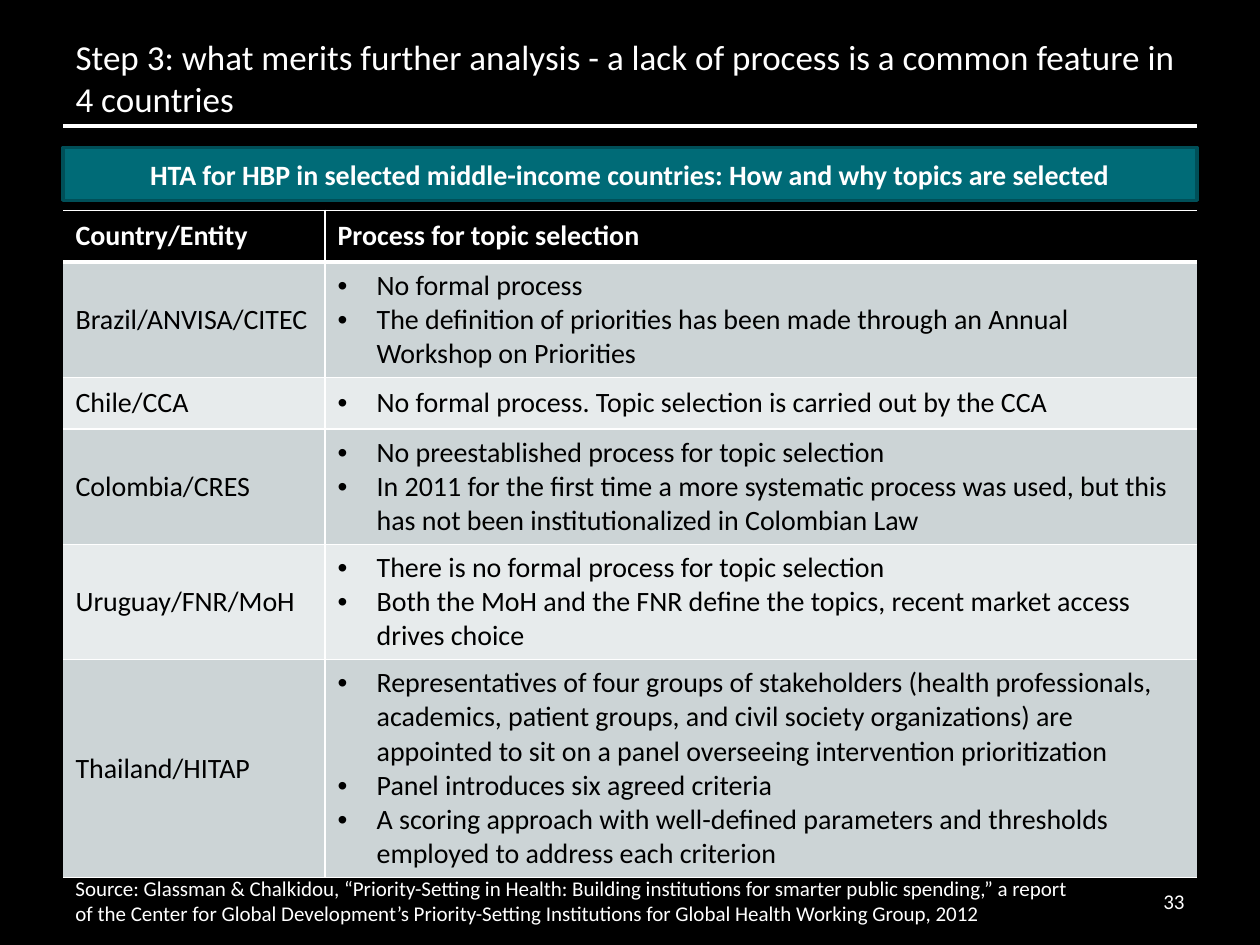
from lxml import etree
from pptx import Presentation
from pptx.dml.color import RGBColor
from pptx.enum.shapes import MSO_CONNECTOR, MSO_SHAPE
from pptx.enum.text import MSO_ANCHOR, MSO_AUTO_SIZE, PP_ALIGN
from pptx.oxml.ns import qn
from pptx.util import Inches, Pt

LEFT, CENTER, RIGHT = PP_ALIGN.LEFT, PP_ALIGN.CENTER, PP_ALIGN.RIGHT
MIDDLE, BOTTOM = MSO_ANCHOR.MIDDLE, MSO_ANCHOR.BOTTOM
RECT, STRAIGHT = MSO_SHAPE.RECTANGLE, MSO_CONNECTOR.STRAIGHT
NO_FIT = MSO_AUTO_SIZE.NONE

FONT = "Calibri"
WHITE, BLACK, TEAL, EDGE = "FFFFFF", "000000", "006B77", "004F58"
BANDS = ("CCD4D6", "E7EBEC")
SIDE, WIDE = 0.5, 9
COLS = (2.08, 6.92)

TITLE = "Step 3: what merits further analysis - a lack of process is a common feature in 4 countries"
BANNER = "HTA for HBP in selected middle-income countries: How and why topics are selected"
SOURCE = (
    "Source: Glassman & Chalkidou, “Priority-Setting in Health: Building institutions for "
    "smarter public spending,” a report of the Center for Global Development’s "
    "Priority-Setting Institutions for Global Health Working Group, 2012"
)
NUMBER = "33"
HEADS = ("Country/Entity", "Process for topic selection")
ROWS = [
    ("Brazil/ANVISA/CITEC", 0.91, [
        "No formal process",
        "The definition of priorities has been made through an Annual Workshop on Priorities",
    ]),
    ("Chile/CCA", 0.41, [
        "No formal process. Topic selection is carried out by the CCA",
    ]),
    ("Colombia/CRES", 0.91, [
        "No preestablished process for topic selection",
        "In 2011 for the first time a more systematic process was used, but this has not been "
        "institutionalized in Colombian Law",
    ]),
    ("Uruguay/FNR/MoH", 0.91, [
        "There is no formal process for topic selection",
        "Both the MoH and the FNR define the topics, recent market access drives choice",
    ]),
    ("Thailand/HITAP", 1.66, [
        "Representatives of four groups of stakeholders (health professionals, academics, "
        "patient groups, and civil society organizations) are appointed to sit on a panel "
        "overseeing intervention prioritization",
        "Panel introduces six agreed criteria",
        "A scoring approach with well-defined parameters and thresholds employed to address "
        "each criterion",
    ]),
]


def rgb(code):
    """Turn a hex string into a colour."""
    return RGBColor.from_string(code)


def write(frame, text, size, color=WHITE, bold=False, align=LEFT):
    """Set the text of a frame and format its runs."""
    frame.text = text
    for para in frame.paragraphs:
        para.alignment = align
        for run in para.runs:
            font = run.font
            font.name, font.size, font.bold = FONT, Pt(size), bold
            font.color.rgb = rgb(color)


def place(shape, left, top, width, height):
    """Move and size a shape in inches."""
    shape.left, shape.top = Inches(left), Inches(top)
    shape.width, shape.height = Inches(width), Inches(height)


def set_frame(frame, anchor=MIDDLE):
    """Wrap a text frame, fix its size and anchor it."""
    frame.word_wrap, frame.auto_size = True, NO_FIT
    frame.vertical_anchor = anchor


def add_note(slide, text, left, width, align=LEFT):
    """Add one footer text box."""
    box = slide.shapes.add_textbox(Inches(left), Inches(6.95), Inches(width), Inches(0.4))
    set_frame(box.text_frame)
    write(box.text_frame, text, 12, align=align)


def add_bullets(frame):
    """Give each paragraph a hanging bullet."""
    for para in frame.paragraphs:
        props = para._p.get_or_add_pPr()
        props.set("marL", str(Inches(0.31)))
        props.set("indent", str(-Inches(0.31)))
        etree.SubElement(props, qn("a:buFont")).set("typeface", "Arial")
        etree.SubElement(props, qn("a:buChar")).set("char", "•")


def set_edges(cell, edges):
    """Draw white cell borders of the given point widths, zero for none."""
    props = cell._tc.get_or_add_tcPr()
    for side, width in zip("LRTB", edges):
        line = etree.SubElement(props, qn("a:ln" + side), w=str(Pt(width)))
        if width:
            fill = etree.SubElement(line, qn("a:solidFill"))
            etree.SubElement(fill, qn("a:srgbClr"), val=WHITE)
        else:
            etree.SubElement(line, qn("a:noFill"))


def add_grid(slide):
    """Build the table of countries and processes."""
    rows = [(HEADS[0], 0.41, [HEADS[1]])] + ROWS
    total = sum(height for _, height, _ in rows)
    table = slide.shapes.add_table(
        len(rows), len(COLS), Inches(SIDE), Inches(1.67), Inches(WIDE), Inches(total)
    ).table
    table.horz_banding = False
    for col, width in zip(table.columns, COLS):
        col.width = Inches(width)
    for r, (name, height, items) in enumerate(rows):
        table.rows[r].height = Inches(height)
        head = r == 0
        for c, text in enumerate((name, "\n".join(items))):
            cell = table.cell(r, c)
            cell.vertical_anchor = MIDDLE
            write(cell.text_frame, text, 16, WHITE if head else BLACK, head)
            set_edges(cell, (c, 1 - c, 3 if r == 1 else 1, 3 if head else 1))
            if head:
                cell.fill.background()
                continue
            cell.fill.solid()
            cell.fill.fore_color.rgb = rgb(BANDS[(r - 1) % 2])
            if c:
                add_bullets(cell.text_frame)


def main():
    """Build the slide and save it."""
    deck = Presentation()
    deck.slide_width, deck.slide_height = Inches(10), Inches(7.5)
    slide = deck.slides.add_slide(deck.slide_layouts[5])
    slide.background.fill.solid()
    slide.background.fill.fore_color.rgb = rgb(BLACK)

    title = slide.shapes.title
    place(title, SIDE, 0.3, WIDE, 0.7)
    set_frame(title.text_frame, BOTTOM)
    write(title.text_frame, TITLE, 20)

    rule = slide.shapes.add_connector(
        STRAIGHT, Inches(SIDE), Inches(1), Inches(SIDE + WIDE), Inches(1)
    )
    rule.line.color.rgb, rule.line.width = rgb(WHITE), Pt(2.25)
    etree.SubElement(rule._element.spPr, qn("a:effectLst"))

    banner = slide.shapes.add_shape(RECT, Inches(SIDE), Inches(1.17), Inches(WIDE), Inches(0.42))
    banner.shadow.inherit = False
    banner.fill.solid()
    banner.fill.fore_color.rgb = rgb(TEAL)
    banner.line.color.rgb, banner.line.width = rgb(EDGE), Pt(2)
    set_frame(banner.text_frame)
    write(banner.text_frame, BANNER, 16, bold=True, align=CENTER)

    add_grid(slide)
    add_note(slide, SOURCE, SIDE, 8.25)
    add_note(slide, NUMBER, 8.93, 0.57, RIGHT)
    deck.save("out.pptx")


if __name__ == "__main__":
    main()
